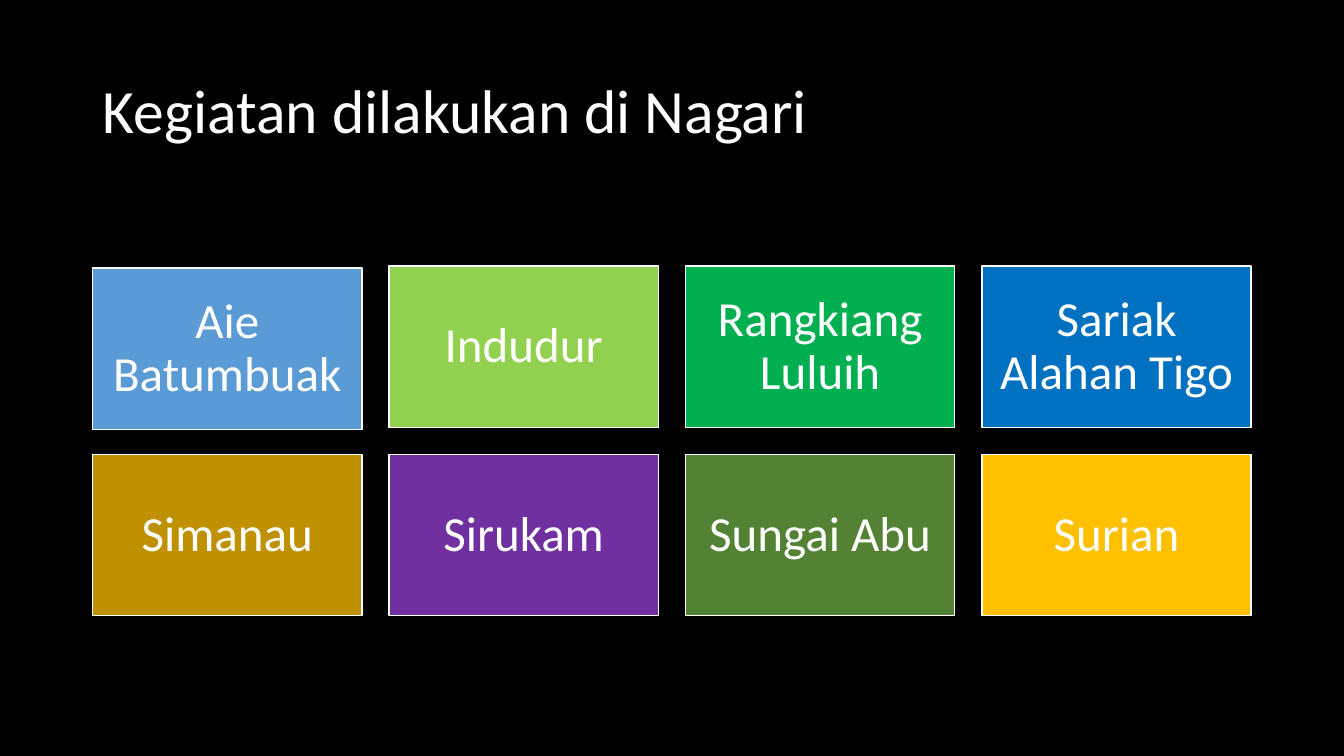
from dataclasses import dataclass

from pptx import Presentation
from pptx.dml.color import RGBColor
from pptx.enum.shapes import MSO_SHAPE
from pptx.enum.text import MSO_ANCHOR, MSO_AUTO_SIZE, PP_ALIGN
from pptx.slide import Slide
from pptx.text.text import TextFrame
from pptx.util import Inches, Pt

RECT = MSO_SHAPE.RECTANGLE
MIDDLE = MSO_ANCHOR.MIDDLE
FIXED = MSO_AUTO_SIZE.NONE
LEFT = PP_ALIGN.LEFT
CENTER = PP_ALIGN.CENTER

BLACK = RGBColor(0x00, 0x00, 0x00)
WHITE = RGBColor(0xFF, 0xFF, 0xFF)
BLUE = RGBColor(0x5B, 0x9B, 0xD5)
LIME = RGBColor(0x92, 0xD0, 0x50)
GREEN = RGBColor(0x00, 0xB0, 0x50)
NAVY = RGBColor(0x00, 0x70, 0xC0)
BRONZE = RGBColor(0xBF, 0x90, 0x00)
PURPLE = RGBColor(0x70, 0x30, 0xA0)
OLIVE = RGBColor(0x54, 0x82, 0x35)
GOLD = RGBColor(0xFF, 0xC0, 0x00)

FONT = "Calibri"
COLS = 4
X0, Y0 = 0.92, 2.64
STEP_X, STEP_Y = 2.94, 1.87
WIDTH, HEIGHT = 2.67, 1.6
INSET = Inches(0.15)


@dataclass
class Tile:
    name: str
    fill: RGBColor
    drop: float = 0


TILES = [
    Tile("Aie Batumbuak", BLUE, 0.02),
    Tile("Indudur", LIME),
    Tile("Rangkiang Luluih", GREEN),
    Tile("Sariak Alahan Tigo", NAVY),
    Tile("Simanau", BRONZE),
    Tile("Sirukam", PURPLE),
    Tile("Sungai Abu", OLIVE),
    Tile("Surian", GOLD),
]


def set_text(frame: TextFrame, text: str, size: int, align: PP_ALIGN) -> None:
    frame.text = text
    frame.word_wrap = True
    frame.auto_size = FIXED
    frame.vertical_anchor = MIDDLE
    para = frame.paragraphs[0]
    para.alignment = align
    para.line_spacing = 0.9
    para.space_before = Pt(0)
    para.font.name = FONT
    para.font.size = Pt(size)
    para.font.color.rgb = WHITE


def add_title(slide: Slide, text: str) -> None:
    title = slide.shapes.title
    title.left, title.top = Inches(0.92), Inches(0.4)
    title.width, title.height = Inches(11.5), Inches(1.45)
    set_text(title.text_frame, text, 44, LEFT)


def add_tile(slide: Slide, tile: Tile, index: int) -> None:
    row, col = divmod(index, COLS)
    left = Inches(X0 + col * STEP_X)
    top = Inches(Y0 + row * STEP_Y + tile.drop)
    box = slide.shapes.add_shape(RECT, left, top, Inches(WIDTH), Inches(HEIGHT))
    box.shadow.inherit = False
    box.fill.solid()
    box.fill.fore_color.rgb = tile.fill
    box.line.color.rgb = WHITE
    box.line.width = Pt(1)
    frame = box.text_frame
    frame.margin_left = frame.margin_right = INSET
    frame.margin_top = frame.margin_bottom = INSET
    set_text(frame, tile.name, 35, CENTER)


def main() -> None:
    deck = Presentation()
    deck.slide_width, deck.slide_height = Inches(13.33), Inches(7.5)
    slide = deck.slides.add_slide(deck.slide_layouts[5])
    slide.background.fill.solid()
    slide.background.fill.fore_color.rgb = BLACK
    add_title(slide, "Kegiatan dilakukan di Nagari")
    for index, tile in enumerate(TILES):
        add_tile(slide, tile, index)
    deck.save("out.pptx")


if __name__ == "__main__":
    main()
